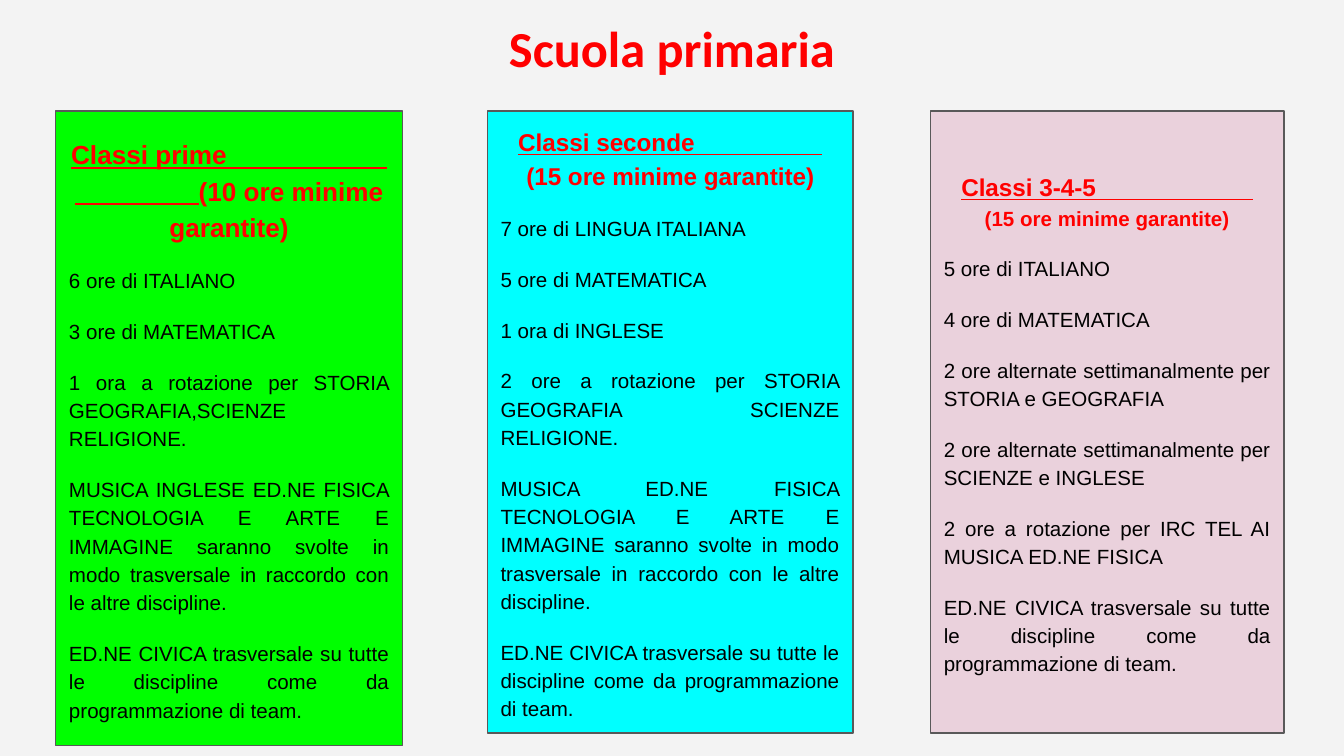
import pptx
import pptx.util
import pptx.dml.color
import pptx.enum.shapes
import pptx.enum.text

Inch, Pt = pptx.util.Inches, pptx.util.Pt
ALIGN = pptx.enum.text.PP_ALIGN
ANCHOR = pptx.enum.text.MSO_ANCHOR

HUES = {"back": "F3F3F3", "head": "FF0000", "text": "000000", "edge": "595959",
        "green": "00FF00", "cyan": "00FFFF", "pink": "EAD1DC"}
WIDE = 10
HIGH = WIDE * 9 / 16
CELL = 0.1  # inches per grid column and row
TOP = 8.26

ARTS = "MUSICA {}ED.NE FISICA TECNOLOGIA E ARTE E IMMAGINE saranno svolte in modo " \
       "trasversale in raccordo con le altre discipline."
CIVICS = "ED.NE CIVICA trasversale su tutte le discipline come da programmazione di team."

# left, width, height, fill, heading size, heading, underlined blanks (count, size), hours, lines
CARDS = [
    (4.15, 25.8, 47.2, "green", 14, "Classi prime", [(40, 14)], 10, [
        "6 ore di ITALIANO", "3 ore di MATEMATICA",
        "1 ora a rotazione per STORIA GEOGRAFIA,SCIENZE RELIGIONE.",
        ARTS.format("INGLESE ")]),
    (36.26, 27.2, 46.3, "cyan", 13, "Classi seconde", [(20, 13)], 15, [
        "7 ore di LINGUA ITALIANA", "5 ore di MATEMATICA", "1 ora di INGLESE",
        "2 ore a rotazione per STORIA GEOGRAFIA SCIENZE RELIGIONE.",
        ARTS.format("")]),
    (69.24, 26.3, 46.3, "pink", 13, "Classi 3-4-5", [(3, 13), (25, 11)], 15, [
        "5 ore di ITALIANO", "4 ore di MATEMATICA",
        "2 ore alternate settimanalmente per STORIA e GEOGRAFIA",
        "2 ore alternate settimanalmente per SCIENZE e INGLESE",
        "2 ore a rotazione per IRC TEL AI MUSICA ED.NE FISICA"]),
]


def tint(name):
    return pptx.dml.color.RGBColor.from_string(HUES[name])


def apply(item, form):
    for key, value in form.items():
        setattr(item, key, value)


class Deck:
    """Holds the style and the current slide."""

    frame = {"word_wrap": True, "auto_size": pptx.enum.text.MSO_AUTO_SIZE.NONE,
             **{f"margin_{side}": Inch(0.1) for side in ("left", "top", "right", "bottom")}}
    para = {"line_spacing": 1.15, "space_before": Pt(12), "space_after": Pt(0)}

    def __init__(self):
        self.file = pptx.Presentation()
        apply(self.file, {"slide_width": Inch(WIDE), "slide_height": Inch(HIGH)})
        self.slide = self.file.slides.add_slide(self.file.slide_layouts[5])
        fill = self.slide.background.fill
        fill.solid()
        fill.fore_color.rgb = tint("back")

    def grid(self, *cells):
        return [Inch(cell * CELL) for cell in cells]

    def run(self, para, text, size, hue="head", face="Arial", bold=True, under=False):
        run = para.add_run()
        run.text = text
        apply(run.font, {"size": Pt(size), "name": face, "bold": bold, "underline": under})
        run.font.color.rgb = tint(hue)

    def title(self, text, *cells):
        shape = self.slide.shapes.title
        apply(shape, dict(zip(("left", "top", "width", "height"), self.grid(*cells))))
        apply(shape.text_frame, {**self.frame, "vertical_anchor": ANCHOR.TOP})
        para = shape.text_frame.paragraphs[0]
        apply(para, {**self.para, "alignment": ALIGN.CENTER})
        self.run(para, text, 27, face="Calibri")

    def card(self, left, width, height, hue, size, head, blanks, hours, lines):
        shape = self.slide.shapes.add_shape(
            pptx.enum.shapes.MSO_SHAPE.RECTANGLE, *self.grid(left, TOP, width, height))
        shape.shadow.inherit = False
        shape.fill.solid()
        shape.fill.fore_color.rgb = tint(hue)
        shape.line.color.rgb = tint("edge")
        shape.line.width = Pt(0.75)
        body = shape.text_frame
        apply(body, {**self.frame, "vertical_anchor": ANCHOR.MIDDLE})

        para = body.paragraphs[0]
        apply(para, {**self.para, "alignment": ALIGN.CENTER})
        # The first blanks share the heading's run, so their rule is unbroken.
        (count, size), *rest = blanks
        self.run(para, head + " " * count, size, under=True)
        for count, size in rest:
            self.run(para, " " * count, size, under=True)
        self.run(para, f"({hours} ore minime garantite)", size)

        for line in lines + [CIVICS]:
            para = body.add_paragraph()
            apply(para, {**self.para, "alignment": ALIGN.JUSTIFY})
            self.run(para, line, 11, "text", bold=False)
        para.space_after = Pt(12)


def main():
    deck = Deck()
    deck.title("Scuola primaria", 3.4, -0.4, 93.2, 8.6)
    for card in CARDS:
        deck.card(*card)
    deck.file.save("out.pptx")


if __name__ == "__main__":
    main()
